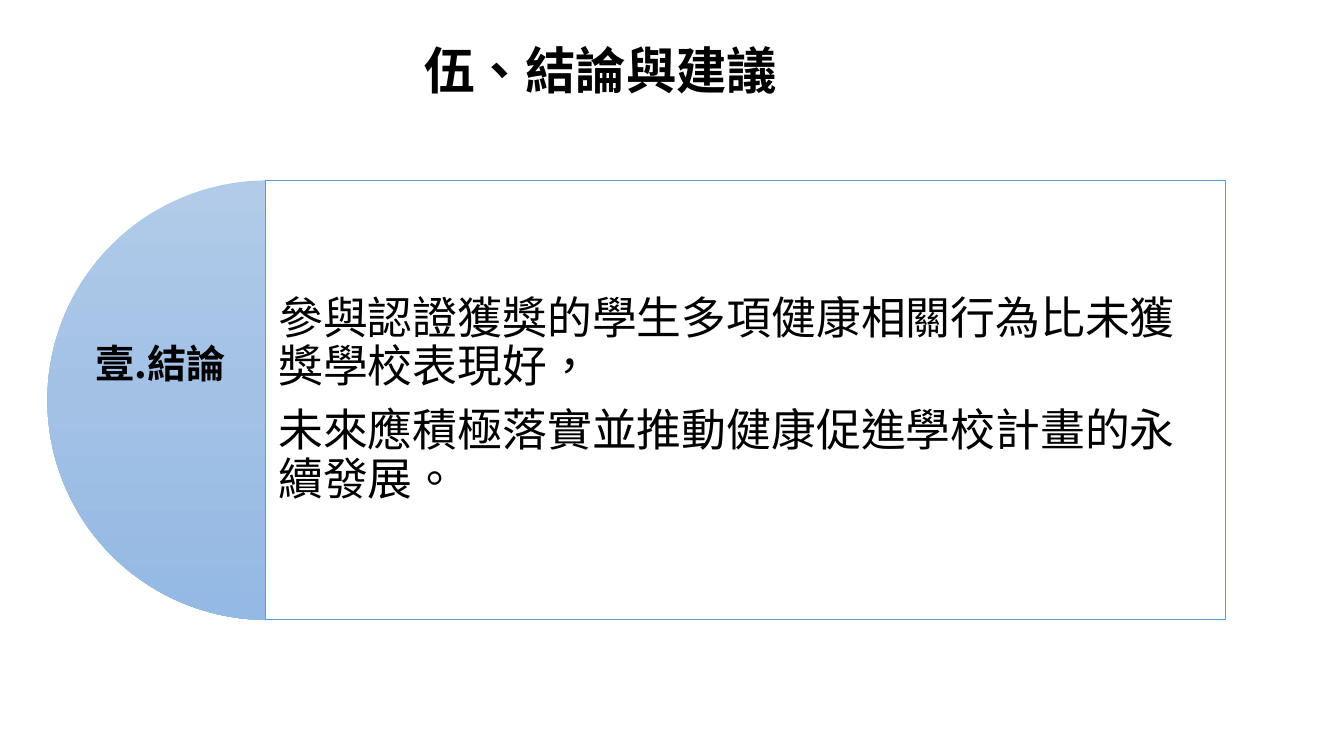
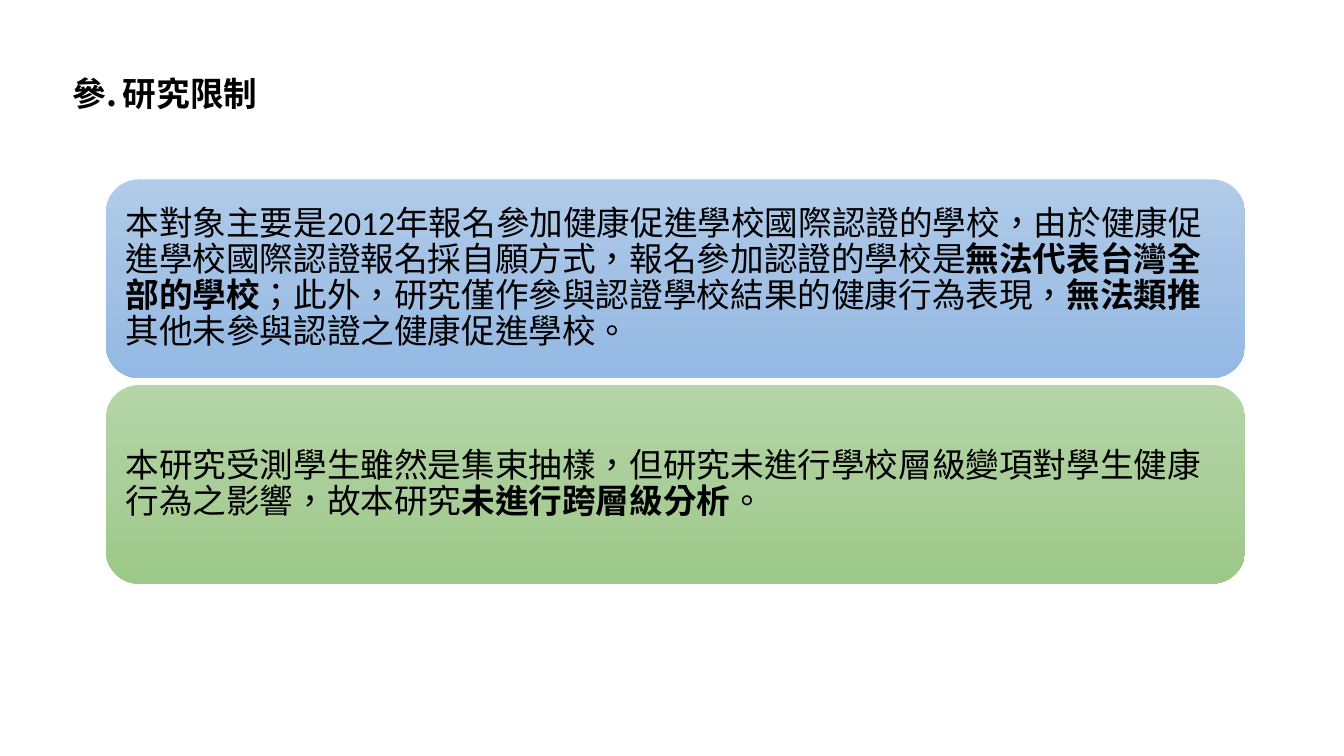
from copy import deepcopy

from lxml import etree
from pptx import Presentation
from pptx.dml.color import RGBColor
from pptx.enum.shapes import MSO_SHAPE as SHAPE
from pptx.enum.text import MSO_ANCHOR as ANCHOR, PP_ALIGN as ALIGN
from pptx.oxml.ns import qn
from pptx.util import Inches, Pt

BLACK = RGBColor(0x00, 0x00, 0x00)
WHITE = RGBColor(0xFF, 0xFF, 0xFF)
BORDER = RGBColor(0x5B, 0x9B, 0xD5)
BLUES = [RGBColor(0xB1, 0xCB, 0xE9), RGBColor(0xA3, 0xC1, 0xE5), RGBColor(0x93, 0xB9, 0xE4)]
GREENS = [RGBColor(0xB5, 0xD5, 0xA7), RGBColor(0xAA, 0xCE, 0x9A), RGBColor(0x9C, 0xC9, 0x87)]
CJK = "Noto Sans CJK SC"
LATIN = "Calibri"

TITLE = "伍、結論與建議"
CONCLUSIONS = [
    [("參與認證獲獎的學生多項健康相關行為比未獲獎學校表現好，", False)],
    [("未來應積極落實並推動健康促進學校計畫的永續發展。", False)],
]
LIMITS = [
    (BLUES, [
        ("本對象主要是2012年報名參加健康促進學校國際認證的學校，由於健康促進學校國際認證報名採自願方式，報名參加認證的學校是", False),
        ("無法代表台灣全部的學校", True),
        ("；此外，研究僅作參與認證學校結果的健康行為表現，", False),
        ("無法類推", True),
        ("其他未參與認證之健康促進學校。", False),
    ]),
    (GREENS, [
        ("本研究受測學生雖然是集束抽樣，但研究未進行學校層級變項對學生健康行為之影響，故本研究", False),
        ("未進行跨層級分析", True),
        ("。", False),
    ]),
]


def assign(obj, values):
    for name, value in values.items():
        setattr(obj, name, value)


def add_shape(s, kind, box):
    sp = s.shapes.add_shape(kind, *map(Inches, box))
    sp.shadow.inherit = False
    sp.line.fill.background()
    return sp


def fill_gradient(sp, colors):
    sp.fill.gradient()
    sp.fill.gradient_angle = 270
    stops = sp._element.spPr.find(qn("a:gradFill")).find(qn("a:gsLst"))
    stops.insert(1, deepcopy(stops[0]))
    for i, (stop, color) in enumerate(zip(sp.fill.gradient_stops, colors)):
        assign(stop, {"position": i / 2})
        stop.color.rgb = color


def write(sp, paragraphs, size, inset=None, font=LATIN, **paragraph_format):
    tf = sp.text_frame
    tf.word_wrap = True
    if inset is not None:
        margins = ("margin_left", "margin_top", "margin_right", "margin_bottom")
        assign(tf, dict.fromkeys(margins, Inches(inset)))
        tf.vertical_anchor = ANCHOR.MIDDLE
    for i, runs in enumerate(paragraphs):
        p = tf.add_paragraph() if i else tf.paragraphs[0]
        assign(p, {"alignment": ALIGN.LEFT, **paragraph_format})
        for text, bold in runs:
            r = p.add_run()
            r.text = text
            assign(r.font, {"size": Pt(size), "bold": bold, "name": font})
            r.font.color.rgb = BLACK
            rpr = r._r.get_or_add_rPr()
            rpr.set("lang", "zh-TW")
            rpr.find(qn("a:latin")).addnext(etree.Element(qn("a:ea"), typeface=CJK))
    return tf


def write_body(sp, paragraphs, size, inset):
    write(sp, paragraphs, size, inset, line_spacing=0.9, space_after=Pt(size * 0.35))


def add_heading(s, text, number, box, size):
    tb = s.shapes.add_textbox(*map(Inches, box))
    tf = write(tb, [[(text, True)]], size)
    ppr = tf.paragraphs[0]._p.get_or_add_pPr()
    ppr.set("marL", str(Inches(0.5)))
    ppr.set("indent", str(-Inches(0.5)))
    etree.SubElement(ppr, qn("a:buAutoNum"), type="ea1ChtPeriod", startAt=str(number))


def build_conclusion(s):
    tb = s.shapes.add_textbox(*map(Inches, (0.21, 0.41, 11.5, 0.81)))
    write(tb, [[(TITLE, True)]], 36, font=CJK, alignment=ALIGN.CENTER, line_spacing=0.9)

    top, height = 1.79, 4.36
    half_disc = add_shape(s, SHAPE.PIE, (0.47, top, height, height))
    half_disc.adjustments[0] = 54
    half_disc.adjustments[1] = 162
    fill_gradient(half_disc, BLUES)

    panel = add_shape(s, SHAPE.RECTANGLE, (2.63, top, 9.52, height))
    panel.fill.solid()
    panel.fill.fore_color.rgb = WHITE
    panel.line.color.rgb = BORDER
    panel.line.width = Pt(0.5)
    write_body(panel, CONCLUSIONS, 32, 0.13)
    add_heading(s, "結論", 1, (0.85, 3.32, 1.7, 0.57), 28)


def build_limits(s):
    top, height, gap = 1.78, 1.97, 0.07
    for i, (colors, runs) in enumerate(LIMITS):
        card = add_shape(s, SHAPE.ROUNDED_RECTANGLE, (1.05, top + i * (height + gap), 11.3, height))
        fill_gradient(card, colors)
        write_body(card, [runs], 24, 0.1)
    add_heading(s, "研究限制", 3, (0.62, 0.67, 2.84, 0.5), 24)


def main():
    prs = Presentation()
    assign(prs, {"slide_width": Inches(13.33), "slide_height": Inches(7.5)})
    for build in (build_conclusion, build_limits):
        build(prs.slides.add_slide(prs.slide_layouts[6]))
    prs.save("out.pptx")


if __name__ == "__main__":
    main()
